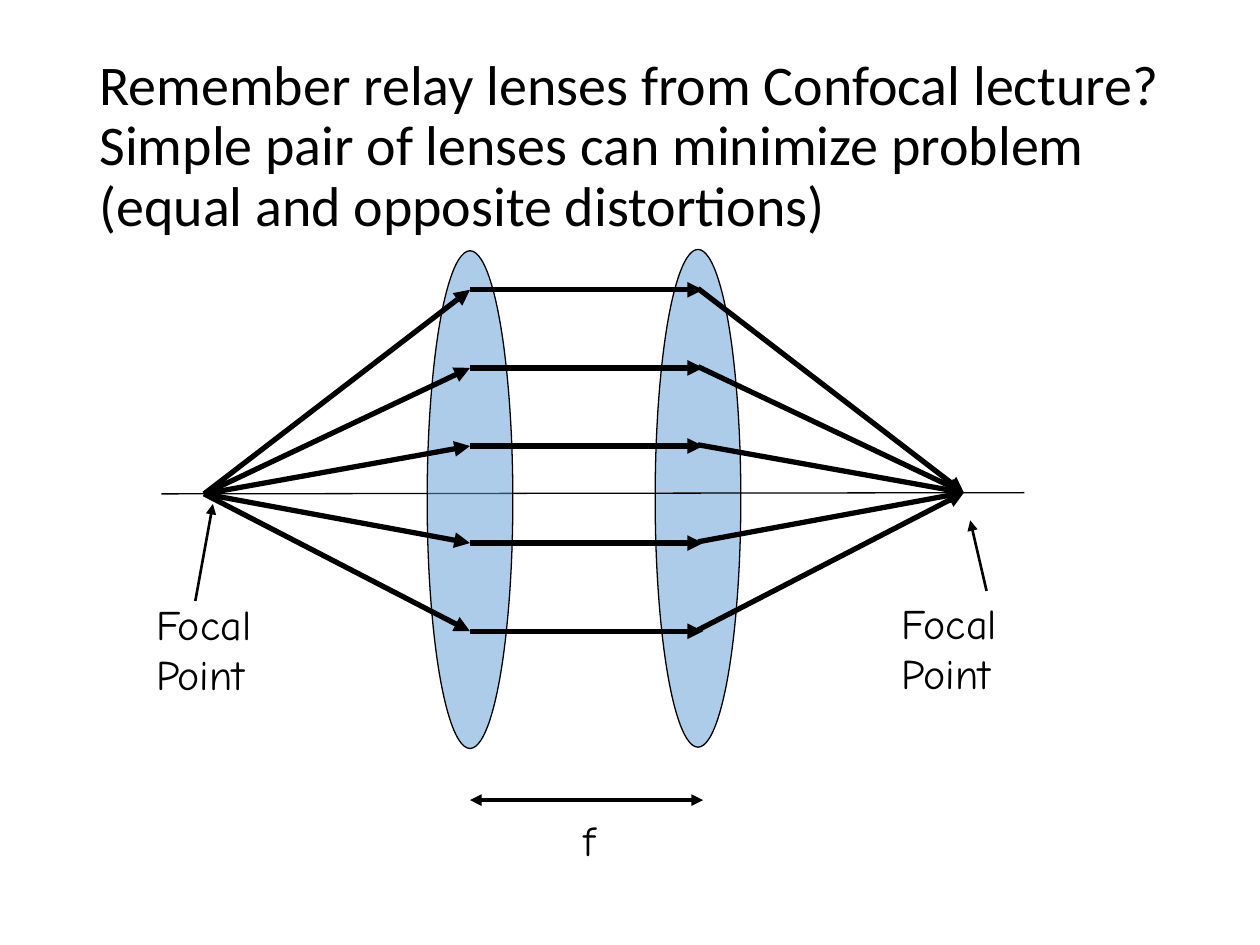
from pptx import Presentation
from pptx import util as u
from pptx.dml.color import RGBColor
from pptx.enum import shapes, text
from pptx.oxml.ns import qn
from lxml import etree

HUES = {"ink": "000000", "lens": "5B9BD5"}


class Board:
    """Holds the style and the current slide, and draws each kind of element."""

    def __init__(self, slide):
        self.slide = slide
        self.ink = RGBColor.from_string(HUES["ink"])

    def lens(self, left, top, flip=False):
        oval = self.slide.shapes.add_shape(
            shapes.MSO_SHAPE.OVAL, u.Inches(left), u.Inches(top),
            u.Inches(0.68), u.Inches(3.95))
        oval.shadow.inherit = False
        oval.fill.solid()
        oval.fill.fore_color.rgb = RGBColor.from_string(HUES["lens"])
        hue = oval.fill._xPr.find(".//" + qn("a:srgbClr"))
        etree.SubElement(hue, qn("a:alpha"), val="50000")
        oval.line.color.rgb = self.ink
        oval.line.width = u.Pt(0.75)
        if flip:
            oval._element.spPr.find(qn("a:xfrm")).set("flipH", "1")

    def line(self, start, stop, width, *ends):
        points = [u.Inches(n) for n in (*start, *stop)]
        rule = self.slide.shapes.add_connector(
            shapes.MSO_CONNECTOR.STRAIGHT, *points)
        rule.line.color.rgb = self.ink
        rule.line.width = u.Pt(width)
        for end in ends:
            etree.SubElement(rule.line._ln, qn(f"a:{end}End"), type="triangle")
        etree.SubElement(rule._element.spPr, qn("a:effectLst"))

    def run(self, para, words, size, font):
        run = para.add_run()
        run.text = words
        run.font.size = u.Pt(size)
        run.font.name = font
        run.font.color.rgb = self.ink

    def box(self, area, wrap):
        shape = self.slide.shapes.add_textbox(*[u.Inches(n) for n in area])
        shape.text_frame.word_wrap = wrap
        return shape.text_frame

    def label(self, area, lines, align=text.PP_ALIGN.LEFT,
              anchor=text.MSO_ANCHOR.TOP):
        frame = self.box(area, False)
        frame.auto_size = text.MSO_AUTO_SIZE.SHAPE_TO_FIT_TEXT
        frame.vertical_anchor = anchor
        for i, words in enumerate(lines):
            para = frame.add_paragraph() if i else frame.paragraphs[0]
            para.alignment = align
            self.run(para, words, 24, "Comic Neue")

    def title(self, area, lines):
        para = self.box(area, True).paragraphs[0]
        para.line_spacing = 0.9
        for i, words in enumerate(lines):
            if i:
                para.add_line_break()
            self.run(para, words, 32, "Calibri")


def main():
    deck = Presentation()
    deck.slide_width, deck.slide_height = u.Inches(10), u.Inches(7.5)
    board = Board(deck.slides.add_slide(deck.slide_layouts[6]))
    near, far = (1.62, 3.92), (7.65, 3.91)
    left, right = 3.73, 5.58

    board.lens(5.2, 1.98, flip=True)
    board.line((1.28, 3.92), (8.13, 3.91), 0.75)
    board.lens(3.39, 1.99)
    for y in (2.3, 2.92, 3.54, 4.31, 5.01):
        board.line((left, y), (right, y), 3, "tail")
        board.line(near, (left, y), 3, "tail")
        board.line(far, (5.54, y - 0.01), 3, "head")

    focus = ["Focal", "Point"]
    board.label((1.14, 4.7, 1.07, 1.03), focus)
    board.line((1.55, 4.77), (1.69, 4), 1.5, "tail")
    board.label((7.06, 4.69, 1.07, 1.03), focus)
    board.line((7.83, 4.69), (7.7, 4.13), 1.5, "tail")

    board.label((4.49, 6.38, 0.37, 0.57), ["f"],
                text.PP_ALIGN.CENTER, text.MSO_ANCHOR.MIDDLE)
    board.line((left, 6.35), (right, 6.35), 2.25, "head", "tail")
    board.title((0.69, 0.4, 8.62, 1.45), [
        "Remember relay lenses from Confocal lecture?",
        "Simple pair of lenses can minimize problem",
        "(equal and opposite distortions)"])
    deck.save("out.pptx")


if __name__ == "__main__":
    main()
